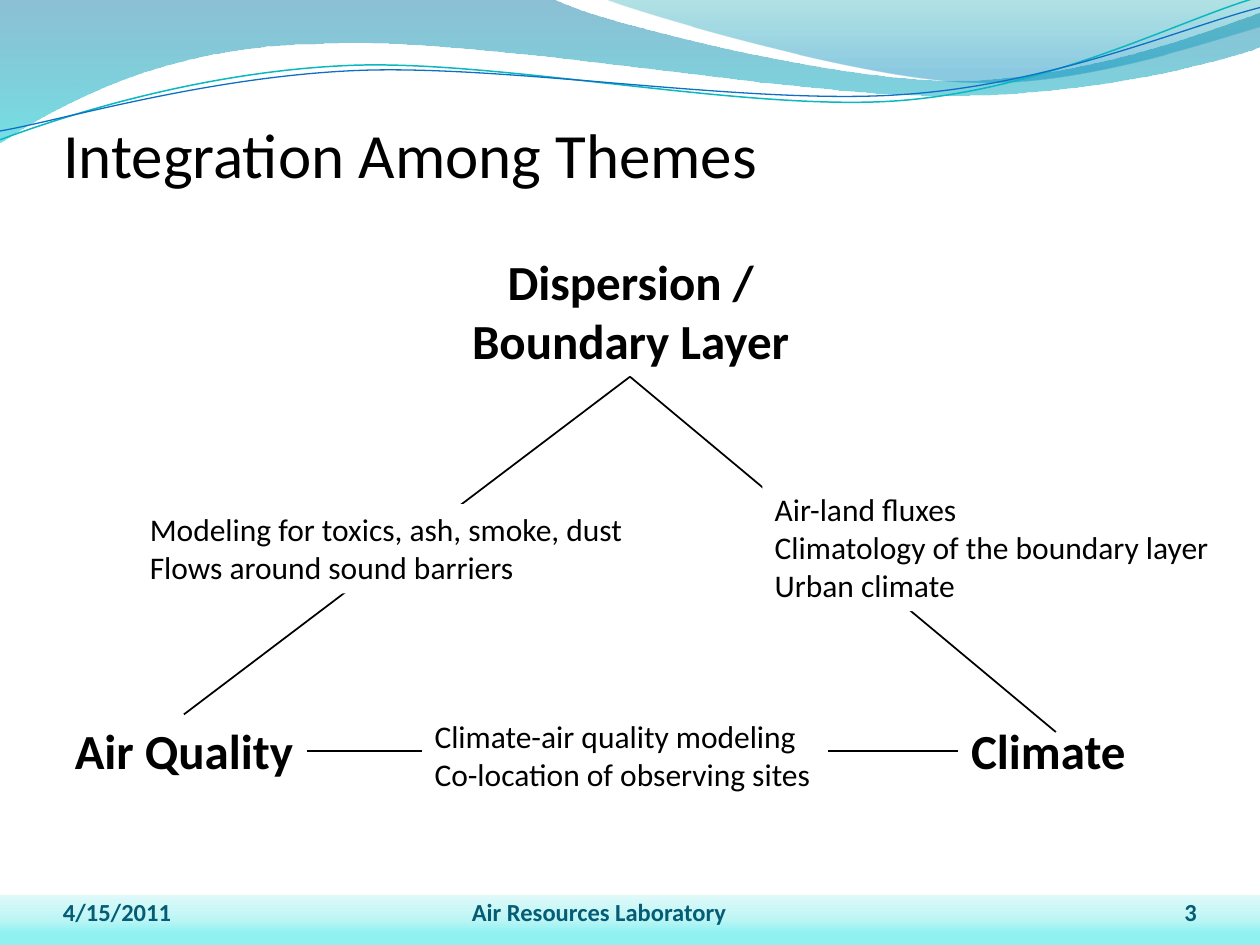
from lxml import etree
from pptx import Presentation
from pptx.dml.color import RGBColor
from pptx.enum.shapes import MSO_CONNECTOR, MSO_SHAPE
from pptx.enum.text import MSO_ANCHOR, MSO_AUTO_SIZE, PP_ALIGN
from pptx.oxml.ns import qn
from pptx.util import Inches, Pt

LEFT, MID, RIGHT = PP_ALIGN.LEFT, PP_ALIGN.CENTER, PP_ALIGN.RIGHT
RECT, LINE = MSO_SHAPE.RECTANGLE, MSO_CONNECTOR.STRAIGHT
TOP, BOTTOM = MSO_ANCHOR.TOP, MSO_ANCHOR.BOTTOM
FONT = "Calibri"
WIDE, HIGH = 10, 7.5
EDGE = 0.05 * WIDE
COLORS = {"ink": "000000", "paper": "FFFFFF", "foot": "045D75",
          "teal": "0AB8BF", "blue": "0F6FC6"}

TITLE = "Integration Among Themes"
FOOT = [("4/15/2011", LEFT, EDGE, 2.33),
        ("Air Resources Laboratory", MID, 2.92, 3.67),
        ("3", RIGHT, 8.67, 0.83)]
THEMES = [(["Dispersion /", "Boundary Layer"], (3.63, 1.95, 2.75, 1.04)),
          (["Air Quality"], (0.48, 5.67, 1.96, 0.57)),
          (["Climate"], (7.6, 5.67, 1.44, 0.57))]
NOTES = [(["Climate-air quality modeling", "Co-location of observing sites"],
          (3.35, 5.64, 3.22, 0.71)),
         (["Modeling for toxics, ash, smoke, dust", "Flows around sound barriers"],
          (1.09, 4, 3.99, 0.71)),
         (["Air-land fluxes", "Climatology of the boundary layer", "Urban climate"],
          (6.05, 3.84, 3.69, 1.01))]
PEAK = (WIDE / 2, 2.99)
LINKS = [((2.44, 5.96), (7.6, 5.96)), (PEAK, (1.46, 5.67)), (PEAK, (8.38, 5.81))]

BAND = [(25, "91F1F1", 100), (50, "BDF5F5", 100), (100, "DFF9F9", 100)]
WAVES = [
    ([[(0, 0)], [(4.4, 0)],
      [(4.76, 0.18), (6.64, 0.64), (7.58, 0.64)],
      [(8.53, 0.64), (9.58, 0.26), (10, 0.1)], [(10.01, 0.37)],
      [(9.83, 0.45), (8.7, 0.77), (7.46, 0.76)],
      [(6.22, 0.76), (3.82, 0.29), (2.57, 0.35)],
      [(1.29, 0.36), (0.46, 0.84), (-0.01, 1.14)]],
     [(0, "0074A1", 45), (100, "00C6CF", 55)]),
    ([[(4.79, -0.01)],
      [(5.09, 0.11), (6.82, 0.62), (7.69, 0.65)],
      [(8.56, 0.69), (9.61, 0.32), (10, 0.21)], [(10, 0)]],
     [(0, "00A1A9", 30), (80, "008BBF", 45)]),
]
CURVES = [
    ([[(0, 1.11)],
      [(0.48, 0.93), (1.58, 0.57), (2.77, 0.52)],
      [(3.95, 0.47), (5.93, 0.89), (7.13, 0.8)],
      [(8.33, 0.71), (9.38, 0.15), (9.98, -0.02)]], "teal", 0.85),
    ([[(0, 1.04)],
      [(0.47, 0.96), (1.64, 0.61), (2.83, 0.56)],
      [(4.03, 0.51), (5.97, 0.84), (7.17, 0.75)],
      [(8.36, 0.67), (9.41, 0.21), (10, 0.06)]], "blue", 0.75),
]


def color(name):
    return RGBColor.from_string(COLORS[name])


def inches(box):
    return [Inches(v) for v in box]


def outline(shapes, parts, close):
    dots = [inches(dot) for part in parts for dot in part]
    pen = shapes.build_freeform(*dots[0])
    pen.add_line_segments(dots[1:], close=close)
    shape = pen.convert_to_shape()
    shape.shadow.inherit = False
    legs = iter(list(shape._element.iter(qn("a:lnTo"))))
    for part in parts[1:]:
        first, *rest = [next(legs) for _ in part]
        if rest:
            first.tag_name = None
            bend = etree.Element(qn("a:cubicBezTo"))
            first.addprevious(bend)
            for leg in (first, *rest):
                bend.append(leg[0])
                leg.getparent().remove(leg)
    return shape


def blend(shape, stops, angle):
    shape.line.fill.background()
    shape.fill.gradient()
    grad = shape._element.spPr.find(qn("a:gradFill"))
    for child in list(grad):
        grad.remove(child)
    group = etree.SubElement(grad, qn("a:gsLst"))
    for place, tone, alpha in stops:
        stop = etree.SubElement(group, qn("a:gs"), pos=str(place * 1000))
        mark = etree.SubElement(stop, qn("a:srgbClr"), val=tone)
        if alpha < 100:
            etree.SubElement(mark, qn("a:alpha"), val=str(alpha * 1000))
    etree.SubElement(grad, qn("a:lin"), ang=str(angle * 60000), scaled="0")


def write(shape, lines, size, align=LEFT, bold=False, tone="ink", inset=None,
          anchor=TOP, wrap=False):
    frame = shape.text_frame
    frame.text = "\n".join(lines)
    frame.word_wrap = wrap
    frame.auto_size = MSO_AUTO_SIZE.NONE if wrap else MSO_AUTO_SIZE.SHAPE_TO_FIT_TEXT
    frame.vertical_anchor = anchor
    if inset:
        (frame.margin_left, frame.margin_top,
         frame.margin_right, frame.margin_bottom) = inches(inset)
    for para in frame.paragraphs:
        para.alignment = align
        font = para.font
        font.name, font.size, font.bold = FONT, Pt(size), bold
        font.color.rgb = color(tone)


def main():
    deck = Presentation()
    deck.slide_width, deck.slide_height = inches((WIDE, HIGH))
    slide = deck.slides.add_slide(deck.slide_layouts[5])
    shapes = slide.shapes
    title = shapes.title

    band = shapes.add_shape(RECT, *inches((0, HIGH - 0.4, WIDE, 0.4)))
    band.shadow.inherit = False
    blend(band, BAND, 270)
    for parts, stops in WAVES:
        blend(outline(shapes, parts, True), stops, 90)
    for parts, tone, width in CURVES:
        curve = outline(shapes, parts, False)
        curve.fill.background()
        curve.line.color.rgb = color(tone)
        curve.line.width = Pt(width)

    title.left, title.top, title.width, title.height = inches(
        (EDGE, 0.77, WIDE - 2 * EDGE, 0.75))
    write(title, [TITLE], 36, inset=(0, 0.05, 0, 0), anchor=BOTTOM, wrap=True)
    shapes._spTree.append(title._element)

    for text, align, left, width in FOOT:
        box = shapes.add_textbox(*inches((left, 6.95, width, 0.4)))
        write(box, [text], 14, align, True, "foot", (0, 0, 0, 0), BOTTOM, True)
    for lines, place in THEMES:
        write(shapes.add_textbox(*inches(place)), lines, 28, MID, True)
    for start, end in LINKS:
        link = shapes.add_connector(LINE, *inches(start + end))
        link.line.color.rgb = color("ink")
        link.line.width = Pt(1)
        etree.SubElement(link._element.spPr, qn("a:effectLst"))
    for lines, place in NOTES:
        note = shapes.add_shape(RECT, *inches(place))
        note.shadow.inherit = False
        note.fill.solid()
        note.fill.fore_color.rgb = color("paper")
        note.line.fill.background()
        write(note, lines, 18)

    deck.save("out.pptx")


if __name__ == "__main__":
    main()
